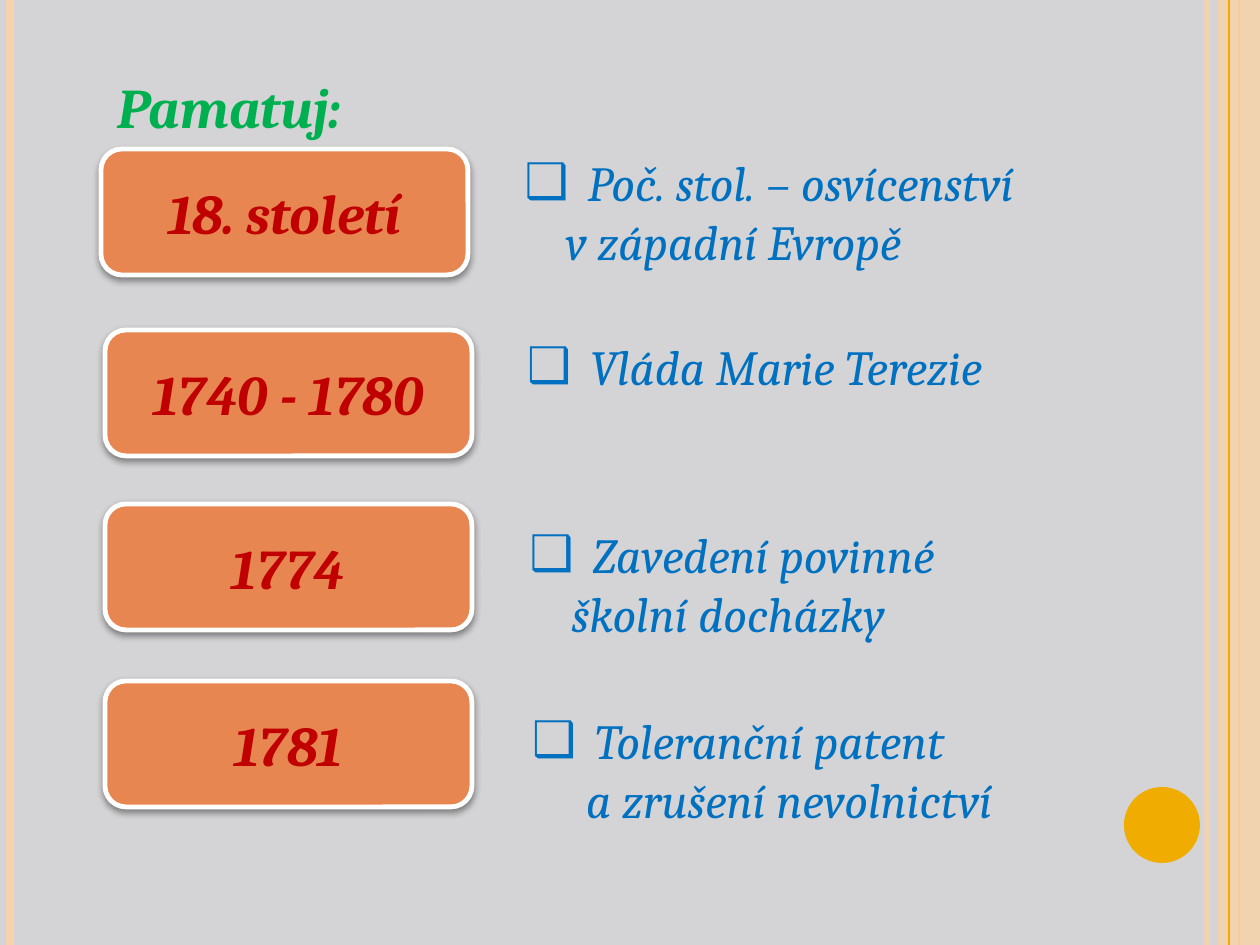
import pptx
import pptx.util
import pptx.dml.color
import pptx.enum.shapes
import pptx.enum.text
import pptx.oxml
import pptx.oxml.ns

SCALE = 914400 / 126
FONT = "Cambria"
PEACH, GOLD, GREEN, RED, BLUE = "F6D3AB", "F0AD00", "00B050", "C00000", "0070C0"
KIND = pptx.enum.shapes.MSO_SHAPE
ALIGN = pptx.enum.text.PP_ALIGN
ANCHOR = pptx.enum.text.MSO_ANCHOR
NS = pptx.oxml.ns.nsdecls("a")
SHADOW = (f'<a:outerShdw {NS} blurRad="50800" dist="25400" dir="5400000" rotWithShape="0">'
          '<a:srgbClr val="000000"><a:alpha val="40000"/></a:srgbClr></a:outerShdw>')


def px(n):
    return pptx.util.Emu(round(n * SCALE))


def color(code):
    return pptx.dml.color.RGBColor.from_string(code)


def fade(shape, percent):
    tone = next(shape.element.spPr.iter(pptx.oxml.ns.qn("a:srgbClr")))
    tone.append(pptx.oxml.parse_xml(f'<a:alpha {NS} val="{percent * 1000}"/>'))


class Page:
    def __init__(self, deck, layout, back):
        self.slide = deck.slides.add_slide(deck.slide_layouts[layout])
        self.slide.background.fill.solid()
        self.slide.background.fill.fore_color.rgb = color(back)

    def style(self, par, size, tone, bold, align=ALIGN.LEFT):
        par.alignment = align
        par.line_spacing = 1.0
        par.space_before = par.space_after = pptx.util.Pt(0)
        for run in par.runs:
            font = run.font
            font.name, font.size = FONT, pptx.util.Pt(size)
            font.bold, font.italic = bold, True
            font.color.rgb = color(tone)

    def place(self, shape, left, top, width, height):
        shape.left, shape.top = px(left), px(top)
        shape.width, shape.height = px(width), px(height)
        frame = shape.text_frame
        frame.word_wrap = True
        frame.auto_size = pptx.enum.text.MSO_AUTO_SIZE.NONE
        frame.vertical_anchor = ANCHOR.TOP
        return frame

    def title(self, text, *box):
        frame = self.place(self.slide.shapes.title, *box)
        frame.text = text
        self.style(frame.paragraphs[0], 32, GREEN, True)

    def note(self, slot, lines, inset, *box):
        frame = self.place(self.slide.placeholders[slot], *box)
        frame.text = "\n".join(lines)
        for i, par in enumerate(frame.paragraphs):
            self.style(par, 28, BLUE, False)
            props = par._p.get_or_add_pPr()
            # The first line carries the bullet, the next is only indented
            mark = '<a:buChar {} char="❑"/>' if i == 0 else "<a:buNone {}/>"
            props.set("marL", str(px(63 if i == 0 else inset)))
            props.set("indent", str(px(-63 if i == 0 else 0)))
            props.append(pptx.oxml.parse_xml(mark.format(NS)))

    def shape(self, kind, fill, *box):
        left, top, width, height = map(px, box)
        shape = self.slide.shapes.add_shape(kind, left, top, width, height)
        shape.shadow.inherit = False
        shape.fill.solid()
        shape.fill.fore_color.rgb = color(fill)
        shape.line.fill.background()
        return shape

    def card(self, text, *box):
        card = self.shape(KIND.ROUNDED_RECTANGLE, "E88651", *box)
        card.line.color.rgb = color("FFFFFF")
        card.line.width = pptx.util.Pt(2.75)
        glow = card.element.spPr.find(pptx.oxml.ns.qn("a:effectLst"))
        glow.append(pptx.oxml.parse_xml(SHADOW))
        frame = card.text_frame
        frame.text = text
        frame.vertical_anchor = ANCHOR.MIDDLE
        self.style(frame.paragraphs[0], 32, RED, True, ALIGN.CENTER)

    def rule(self, x, tone, weight):
        line = self.slide.shapes.add_connector(
            pptx.enum.shapes.MSO_CONNECTOR.STRAIGHT, px(x), 0, px(x), px(945))
        line.line.color.rgb = color(tone)
        line.line.width = pptx.util.Pt(weight)
        line.element.spPr.append(pptx.oxml.parse_xml(f"<a:effectLst {NS}/>"))
        return line


def main():
    deck = pptx.Presentation()
    deck.slide_width, deck.slide_height = px(1260), px(945)
    # The comparison layout offers a title and four bodies
    page = Page(deck, 4, "D4D4D6")

    # Side stripes and dot
    fade(page.rule(1207, PEACH, 3), 93)
    page.rule(10, PEACH, 4.5)
    page.rule(1239, GOLD, 1.5)
    fade(page.shape(KIND.RECTANGLE, PEACH, 1218, 0, 42, 945), 87)
    page.rule(1229, GOLD, 0.75)
    page.shape(KIND.OVAL, GOLD, 1124, 787, 76, 76)

    page.title("Pamatuj:", 105, 66, 295, 81)

    # Dates: text, left, top
    dates = [("18. století", 101, 149), ("1740 - 1780", 105, 330),
             ("1774", 105, 504), ("1781", 105, 681)]
    for text, left, top in dates:
        page.card(text, left, top, 367, 126)

    # Events: lines, indent of the second line, top
    events = [(["Poč. stol. – osvícenství", "v západní Evropě"], 41, 146),
              (["Vláda Marie Terezie"], 41, 330),
              (["Zavedení povinné", "školní docházky"], 42, 518),
              (["Toleranční patent", "a zrušení nevolnictví"], 54, 704)]
    for i, (lines, inset, top) in enumerate(events):
        page.note(i + 1, lines, inset, 512 + 2.5 * i, top, 601, 131)

    deck.save("out.pptx")


if __name__ == "__main__":
    main()
